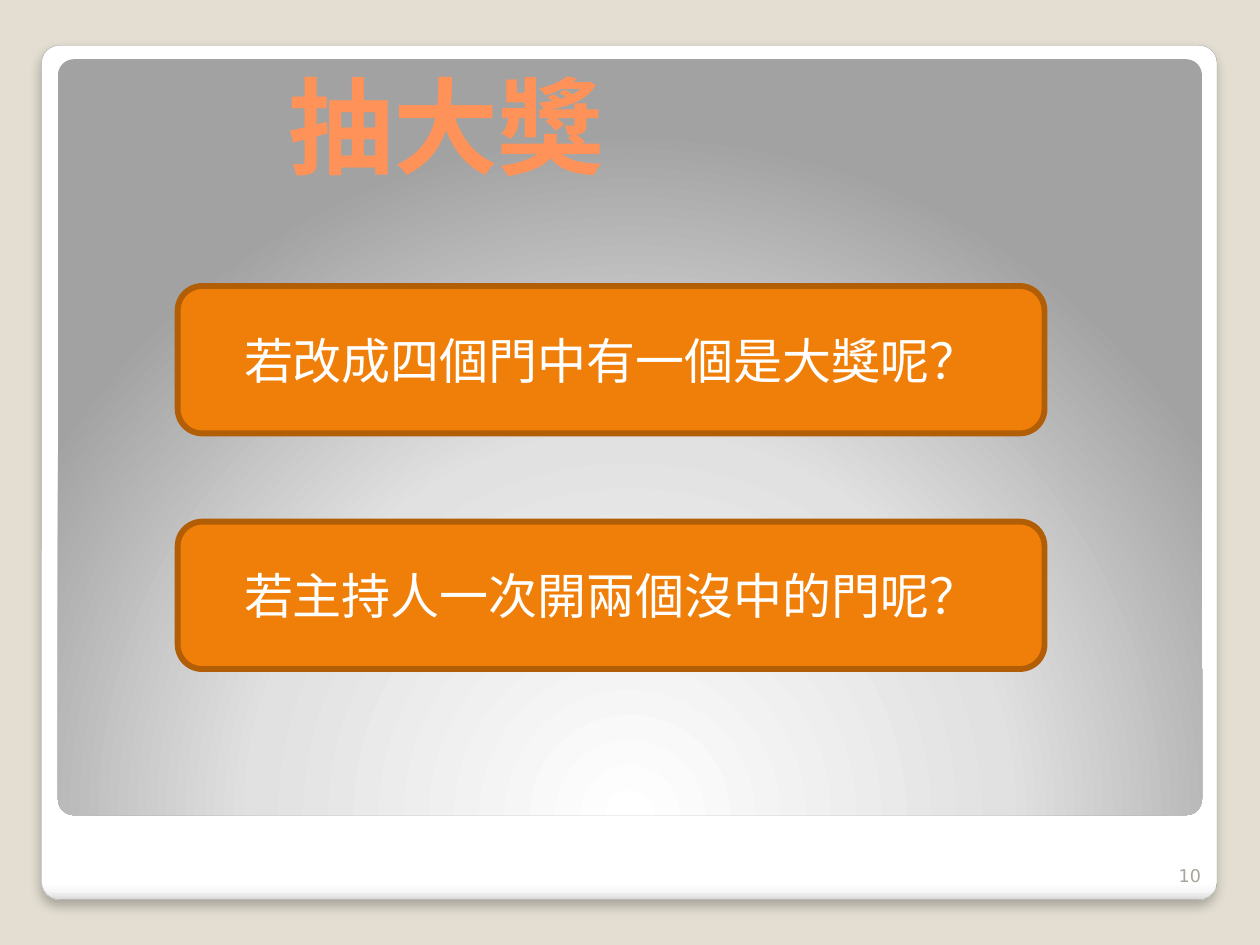
from lxml import etree
from pptx import Presentation
from pptx.dml.color import RGBColor
from pptx.enum import shapes, text
from pptx.oxml import parse_xml
from pptx.oxml.ns import nsdecls, qn
from pptx.util import Inches, Pt

FONT = "DejaVu Sans"


def rgb(value):
    return RGBColor.from_string(value)


def write(shape, content, size, color, align, anchor, bold=False):
    frame = shape.text_frame
    frame.text = content
    frame.word_wrap = True
    frame.auto_size = text.MSO_AUTO_SIZE.NONE
    frame.vertical_anchor = anchor
    paragraph = frame.paragraphs[0]
    paragraph.alignment = align
    font = paragraph.runs[0].font
    font.name, font.size, font.bold = FONT, Pt(size), bold
    font.color.rgb = rgb(color)


presentation = Presentation()
presentation.slide_width, presentation.slide_height = Inches(10), Inches(7.5)
slide = presentation.slides.add_slide(presentation.slide_layouts[5])
slide.background.fill.solid()
slide.background.fill.fore_color.rgb = rgb("E3DED1")

# Card and the grey panel on it, both with gradients
panels = []
for box, stops, direction in [
    ((0.33, 0.36, 9.33, 6.78),
     [(0, "FFFFFF"), (98, "FFFFFF"), (99, "F7F7F7"), (100, "DADADA")],
     '<a:lin ang="5400000" scaled="0"/>'),
    ((0.46, 0.47, 9.08, 6),
     [(0, "FFFFFF"), (55, "E1E1E1"), (100, "A2A2A2")],
     '<a:path path="circle"><a:fillToRect l="50000" t="175000" r="50000" b="-75000"/></a:path>'),
]:
    panel = slide.shapes.add_shape(
        shapes.MSO_SHAPE.ROUNDED_RECTANGLE, *map(Inches, box))
    panel.adjustments[0] = 0.021
    panel.shadow.inherit = False
    panel.line.fill.background()
    panel.fill.background()
    stop_xml = "".join(
        f'<a:gs pos="{position * 1000}"><a:srgbClr val="{color}"/></a:gs>'
        for position, color in stops)
    properties = panel._element.spPr
    properties.replace(properties.find(qn("a:noFill")), parse_xml(
        f'<a:gradFill {nsdecls("a")} rotWithShape="1"><a:gsLst>{stop_xml}</a:gsLst>'
        f'{direction}</a:gradFill>'))
    panels.append(panel)

card = panels[0]
card.line.color.rgb = rgb("A4A4A4")
card.line.width = Pt(0.16)
shadow = etree.SubElement(
    card._element.spPr.find(qn("a:effectLst")), qn("a:outerShdw"),
    blurRad=str(Pt(6)), dist=str(Pt(4)), dir="5400000", algn="t", rotWithShape="0")
shadow_color = etree.SubElement(shadow, qn("a:srgbClr"), val="000000")
etree.SubElement(shadow_color, qn("a:alpha"), val="25000")

# Title, brought in front of the panels
title = slide.shapes.title
title.left, title.top = Inches(2.19), Inches(0.39)
title.width, title.height = Inches(7.39), Inches(1.15)
write(title, "抽大獎", 60, "FF9258", text.PP_ALIGN.LEFT,
      text.MSO_ANCHOR.BOTTOM, bold=True)
panels[-1]._element.addnext(title._element)

page_number = slide.shapes.add_textbox(
    Inches(9.13), Inches(6.68), Inches(0.5), Inches(0.4))
write(page_number, "10", 10, "A8A49B", text.PP_ALIGN.RIGHT, text.MSO_ANCHOR.BOTTOM)

questions = ["若改成四個門中有一個是大獎呢？", "若主持人一次開兩個沒中的門呢？"]
for index, question in enumerate(questions):
    button = slide.shapes.add_shape(
        shapes.MSO_SHAPE.ROUNDED_RECTANGLE, Inches(1.41),
        Inches(2.27 + 1.87 * index), Inches(6.88), Inches(1.17))
    button.shadow.inherit = False
    button.fill.solid()
    button.fill.fore_color.rgb = rgb("F07F09")
    button.line.color.rgb = rgb("B25E07")
    button.line.width = Pt(3.35)
    write(button, question, 28, "FFFFFF", text.PP_ALIGN.CENTER, text.MSO_ANCHOR.MIDDLE)

presentation.save("out.pptx")
